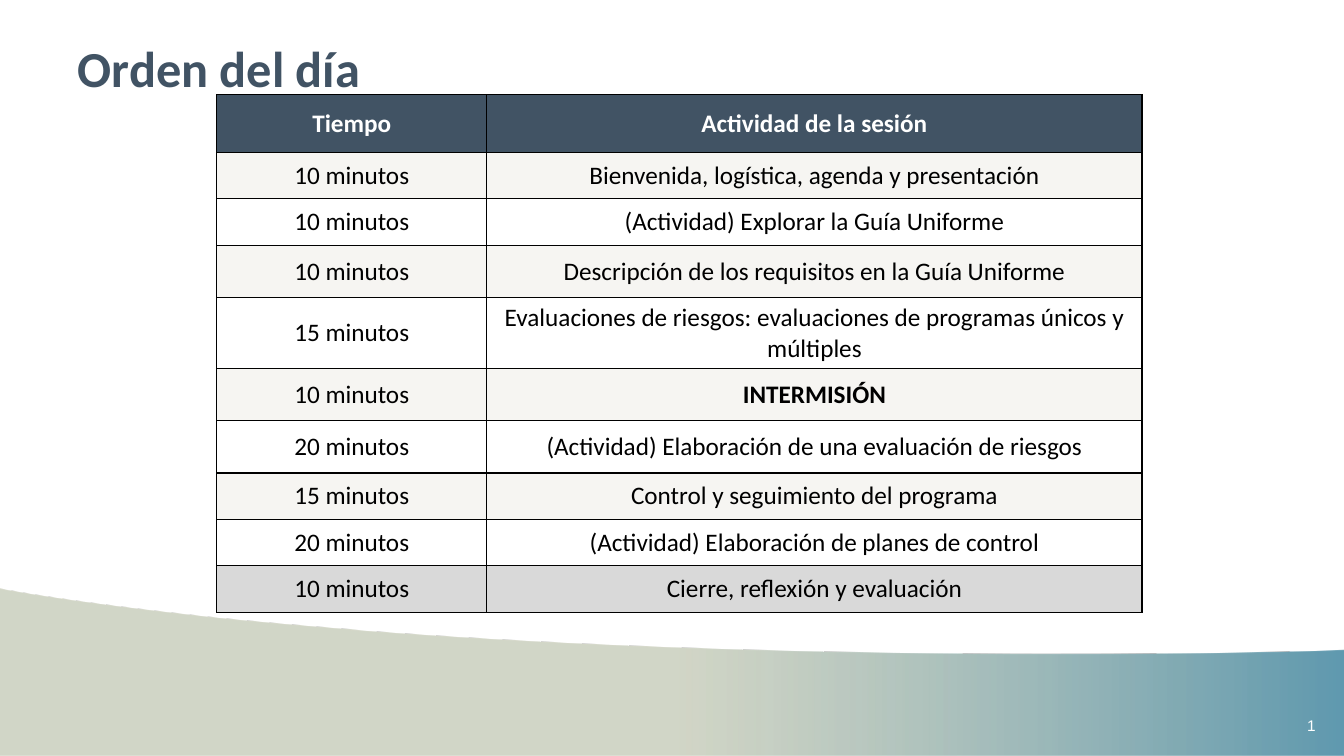
from dataclasses import dataclass

from lxml.etree import SubElement
from pptx import Presentation
from pptx.dml.color import RGBColor
from pptx.dml.fill import FillFormat
from pptx.enum.text import MSO_ANCHOR, PP_ALIGN
from pptx.oxml.ns import qn
from pptx.slide import Slide
from pptx.table import _Cell
from pptx.text.text import TextFrame
from pptx.util import Cm, Pt

NAVY, WHITE, BLACK = "415364", "FFFFFF", "000000"
SAND, GREY, MOSS, BLUE = "A79F88", "D9D9D9", "B7BDA4", "5F99AF"
Point = tuple[float, float]


@dataclass(frozen=True)
class Row:
    """One line of the agenda."""
    time: str
    task: str
    high: float
    fill: str = WHITE
    alpha: int = 100
    ink: str = BLACK
    bold: bool = False
    loud: bool = False


@dataclass(frozen=True)
class Curve:
    """A cubic curve that runs on from the last point."""
    first: Point
    second: Point
    end: Point


ROWS = [
    Row("Tiempo", "Actividad de la sesión", 1.45, NAVY, ink=WHITE, bold=True),
    Row("10 minutos", "Bienvenida, logística, agenda y presentación", 1.17, SAND, 10),
    Row("10 minutos", "(Actividad) Explorar la Guía Uniforme", 1.17),
    Row("10 minutos", "Descripción de los requisitos en la Guía Uniforme", 1.32, SAND, 10),
    Row("15 minutos", "Evaluaciones de riesgos: evaluaciones de programas únicos y múltiples", 1.63),
    Row("10 minutos", "INTERMISIÓN", 1.32, SAND, 10, loud=True),
    Row("20 minutos", "(Actividad) Elaboración de una evaluación de riesgos", 1.32),
    Row("15 minutos", "Control y seguimiento del programa", 1.17, SAND, 10),
    Row("20 minutos", "(Actividad) Elaboración de planes de control", 1.17),
    Row("10 minutos", "Cierre, reflexión y evaluación", 1.17, GREY),
]
WIDTHS = (6.81, 16.51)
CREST = (26.44, 16.48)
LEFT = [
    Curve((18.42, 16.48), (11.07, 16.13), (5.49, 15.57)),
    Curve((3.38, 15.34), (1.55, 15.11), (0, 14.83)),
]
BASE = [(0, 19.05), (33.87, 19.05), (33.87, 16.38)]
RIGHT = Curve((31.5, 16.46), (29.01, 16.48), CREST)


def tint(code: str) -> RGBColor:
    """Turn a hex string into a colour."""
    return RGBColor.from_string(code)


def fade(node, alpha: int) -> None:
    """Set the opacity, in percent, of the first colour under a node."""
    SubElement(next(node.iter(qn("a:srgbClr"))), qn("a:alpha"), val=str(alpha * 1000))


def paint(fill: FillFormat, code: str) -> None:
    """Give a fill one solid colour."""
    fill.solid()
    fill.fore_color.rgb = tint(code)


def write(frame: TextFrame, text: str, size: float, ink: str, bold: bool = False,
          face: str = "Calibri", align: PP_ALIGN = PP_ALIGN.LEFT) -> None:
    """Put one styled line of text in a frame."""
    frame.text = text
    frame.word_wrap = True
    line = frame.paragraphs[0]
    line.alignment = align
    font = line.runs[0].font
    look = {"name": face, "size": Pt(size), "bold": bold}
    for key, value in look.items():
        setattr(font, key, value)
    font.color.rgb = tint(ink)


def trace(start: Point, curve: Curve, steps: int = 24) -> list[Point]:
    """List points along a curve, without its start."""
    knots = (start, curve.first, curve.second, curve.end)
    dots = []
    for step in range(1, steps + 1):
        t = step / steps
        parts = ((1 - t) ** 3, 3 * t * (1 - t) ** 2, 3 * t * t * (1 - t), t ** 3)
        x, y = (sum(p * k[axis] for p, k in zip(parts, knots)) for axis in (0, 1))
        dots.append((x, y))
    return dots


def draw_wave(slide: Slide) -> None:
    """Draw the shaded wave along the foot of the slide."""
    dots = [CREST]
    for curve in LEFT:
        dots += trace(dots[-1], curve)
    dots += BASE
    dots += trace(dots[-1], RIGHT)
    start, *rest = [(Cm(x), Cm(y)) for x, y in dots]
    pen = slide.shapes.build_freeform(*start)
    pen.add_line_segments(rest, close=True)
    wave = pen.convert_to_shape()
    wave.shadow.inherit = False
    wave.line.fill.background()
    wave.fill.gradient()
    wave.fill.gradient_angle = 0
    for stop, place, code in zip(wave.fill.gradient_stops, (0.5, 1), (MOSS, BLUE)):
        stop.position = place
        stop.color.rgb = tint(code)
    fade(wave._element.spPr, 61)


def draw_page(slide: Slide) -> None:
    """Add the slide number as a live field."""
    box = slide.shapes.add_textbox(Cm(32.69), Cm(17.93), Cm(0.99), Cm(0.74))
    write(box.text_frame, "1", 11, WHITE, face="Arial")
    field = box.text_frame.paragraphs[0].runs[0]._r
    field.tag = qn("a:fld")
    field.set("id", "{B6F15528-21DE-4FAA-801E-634DDDAF4B2B}")
    field.set("type", "slidenum")


def draw_title(slide: Slide) -> None:
    """Place and style the title."""
    title = slide.shapes.title
    spot = {"left": 1.42, "top": 0.64, "width": 30.48, "height": 2.11}
    for key, value in spot.items():
        setattr(title, key, Cm(value))
    frame = title.text_frame
    frame.margin_left = Cm(0.54)
    frame.vertical_anchor = MSO_ANCHOR.MIDDLE
    write(frame, "Orden del día", 36, NAVY, bold=True)


def edge(cell: _Cell) -> None:
    """Rule all four sides of a cell."""
    props = cell._tc.get_or_add_tcPr()
    for side in "LRTB":
        line = SubElement(props, qn(f"a:ln{side}"), w=str(Pt(1)))
        fill = SubElement(line, qn("a:solidFill"))
        SubElement(fill, qn("a:srgbClr"), val=BLACK)


def draw_cell(cell: _Cell, text: str, row: Row, bold: bool) -> None:
    """Fill, rule and write one cell."""
    cell.vertical_anchor = MSO_ANCHOR.MIDDLE
    write(cell.text_frame, text, 18, row.ink, bold, align=PP_ALIGN.CENTER)
    edge(cell)
    paint(cell.fill, row.fill)
    if row.alpha < 100:
        fade(cell._tc.tcPr.find(qn("a:solidFill")), row.alpha)


def draw_table(slide: Slide) -> None:
    """Build the agenda table."""
    high = sum(row.high for row in ROWS)
    grid = slide.shapes.add_table(len(ROWS), len(WIDTHS), Cm(5.46), Cm(2.39),
                                  Cm(sum(WIDTHS)), Cm(high)).table
    for column, width in zip(grid.columns, WIDTHS):
        column.width = Cm(width)
    for index, row in enumerate(ROWS):
        grid.rows[index].height = Cm(row.high)
        draw_cell(grid.cell(index, 0), row.time, row, row.bold)
        draw_cell(grid.cell(index, 1), row.task, row, row.bold or row.loud)


def main() -> None:
    """Build the slide and save it."""
    deck = Presentation()
    deck.slide_width, deck.slide_height = Cm(33.87), Cm(19.05)
    slide = deck.slides.add_slide(deck.slide_layouts[5])
    paint(slide.background.fill, WHITE)
    for draw in (draw_wave, draw_page, draw_title, draw_table):
        draw(slide)
    deck.save("out.pptx")


if __name__ == "__main__":
    main()
